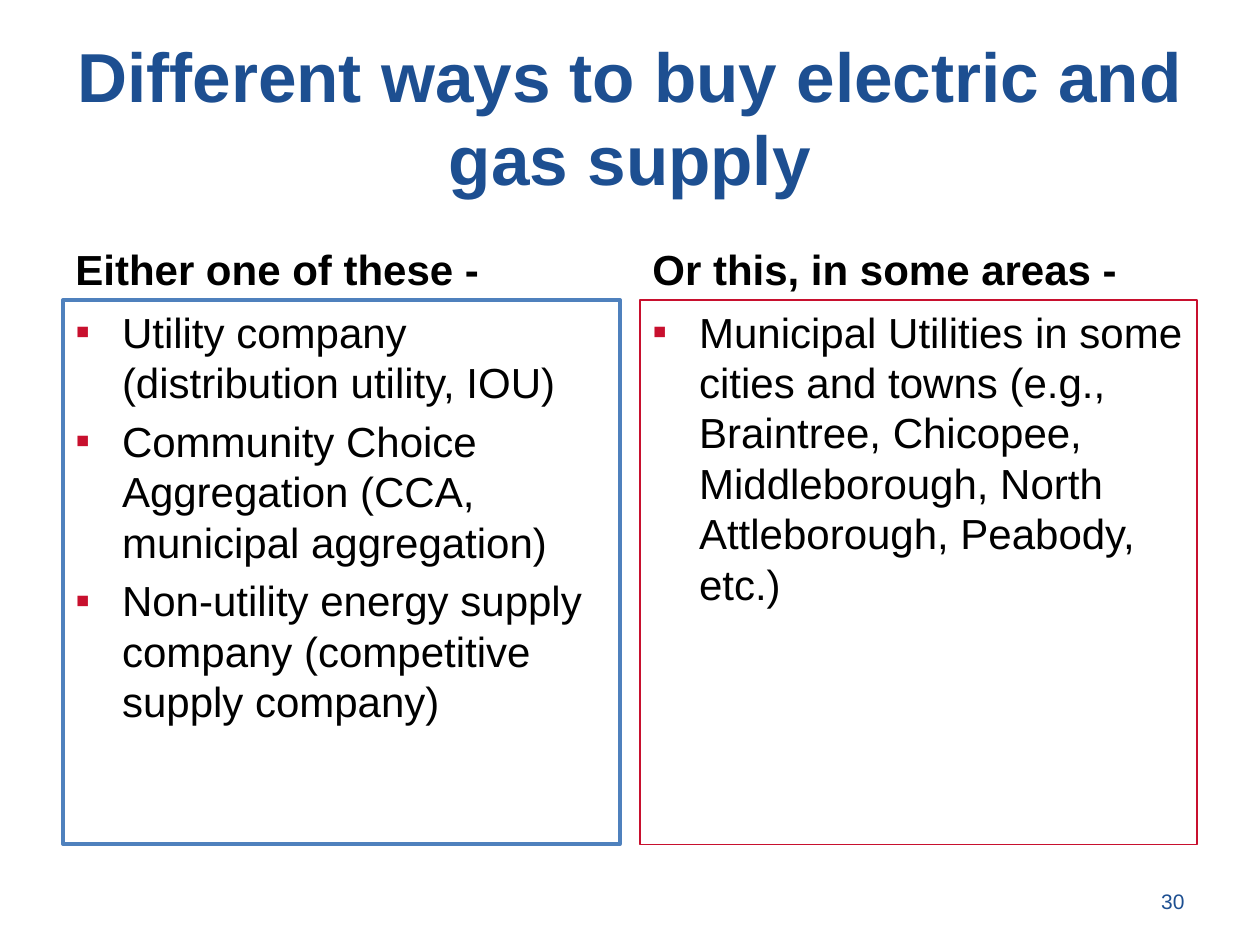
import dataclasses
import typing

import lxml.etree
import pptx
import pptx.dml.color
import pptx.enum.shapes
import pptx.enum.text
import pptx.oxml.ns
import pptx.util

Inches = pptx.util.Inches
Align = pptx.enum.text.PP_ALIGN
Anchor = pptx.enum.text.MSO_ANCHOR

BLUE, RED, BLACK = "1D4F91", "C8102E", "000000"
MARGIN, COLUMN_WIDTH, COLUMN_STEP = 0.5, 4.42, 4.58
HEADING_TOP, HEADING_HEIGHT, LIST_HEIGHT = 1.68, 0.7, 4.32
BULLET_INDENT = 0.37


@dataclasses.dataclass
class Column:
    heading: str
    items: list[str]
    line_color: str
    line_width: float
    fill: typing.Optional[str] = None


COLUMNS = [
    Column(
        "Either one of these -",
        [
            "Utility company (distribution utility, IOU)",
            "Community Choice Aggregation (CCA, municipal aggregation)",
            "Non-utility energy supply company (competitive supply company)",
        ],
        "4F81BD", 2, "FFFFFF",
    ),
    Column(
        "Or this, in some areas -",
        [
            "Municipal Utilities in some cities and towns (e.g., Braintree, "
            "Chicopee, Middleborough, North Attleborough, Peabody, etc.)",
        ],
        RED, 0.75,
    ),
]


def rgb(color: str) -> pptx.dml.color.RGBColor:
    return pptx.dml.color.RGBColor.from_string(color)


def write(shape, texts: list[str], size: float, color: str, anchor, align=Align.LEFT,
          bold: bool = False, space_before: float = 0) -> None:
    """Fill a shape with one paragraph per text."""
    frame = shape.text_frame
    frame.word_wrap = True
    frame.vertical_anchor = anchor
    font_format = {"name": "Arial", "size": pptx.util.Pt(size), "bold": bold}
    for index, text in enumerate(texts):
        para = frame.add_paragraph() if index else frame.paragraphs[0]
        para.alignment = align
        para.space_before = pptx.util.Pt(space_before)
        span = para.add_run()
        span.text = text
        span.font.color.rgb = rgb(color)
        for name, value in font_format.items():
            setattr(span.font, name, value)


def add_text(page, left: float, top: float, width: float, height: float,
             text: str, size: float, color: str, anchor, **layout) -> None:
    box = page.shapes.add_textbox(*map(Inches, (left, top, width, height)))
    write(box, [text], size, color, anchor, **layout)


def add_bullet(para) -> None:
    """Give a paragraph a hanging red square."""
    properties = para._p.get_or_add_pPr()
    properties.set("marL", str(Inches(BULLET_INDENT)))
    properties.set("indent", str(-Inches(BULLET_INDENT)))
    qn = pptx.oxml.ns.qn
    bullet_color = lxml.etree.SubElement(properties, qn("a:buClr"))
    lxml.etree.SubElement(bullet_color, qn("a:srgbClr"), val=RED)
    lxml.etree.SubElement(properties, qn("a:buFont"), typeface="Arial")
    lxml.etree.SubElement(properties, qn("a:buChar"), char="▪")


def add_column(page, column: Column, left: float) -> None:
    add_text(page, left, HEADING_TOP, COLUMN_WIDTH, HEADING_HEIGHT, column.heading,
             24, BLACK, Anchor.BOTTOM, bold=True, space_before=4.8)
    box = page.shapes.add_shape(
        pptx.enum.shapes.MSO_SHAPE.RECTANGLE, Inches(left),
        Inches(HEADING_TOP + HEADING_HEIGHT), Inches(COLUMN_WIDTH), Inches(LIST_HEIGHT))
    box.shadow.inherit = False
    if column.fill:
        box.fill.solid()
        box.fill.fore_color.rgb = rgb(column.fill)
    else:
        box.fill.background()
    box.line.color.rgb = rgb(column.line_color)
    box.line.width = pptx.util.Pt(column.line_width)
    write(box, column.items, 24, BLACK, Anchor.TOP, space_before=4.8)
    for para in box.text_frame.paragraphs:
        add_bullet(para)


def main() -> None:
    deck = pptx.Presentation()
    deck.slide_width, deck.slide_height = Inches(10), Inches(7.5)
    page = deck.slides.add_slide(deck.slide_layouts[6])
    add_text(page, MARGIN, 0.3, 9, 1.25, "Different ways to buy electric and gas supply",
             39.6, BLUE, Anchor.MIDDLE, align=Align.CENTER, bold=True)
    for index, column in enumerate(COLUMNS):
        add_column(page, column, MARGIN + index * COLUMN_STEP)
    add_text(page, 7.17, 6.95, 2.33, 0.4, "30", 12, BLUE, Anchor.MIDDLE, align=Align.RIGHT)
    deck.save("out.pptx")


if __name__ == "__main__":
    main()
